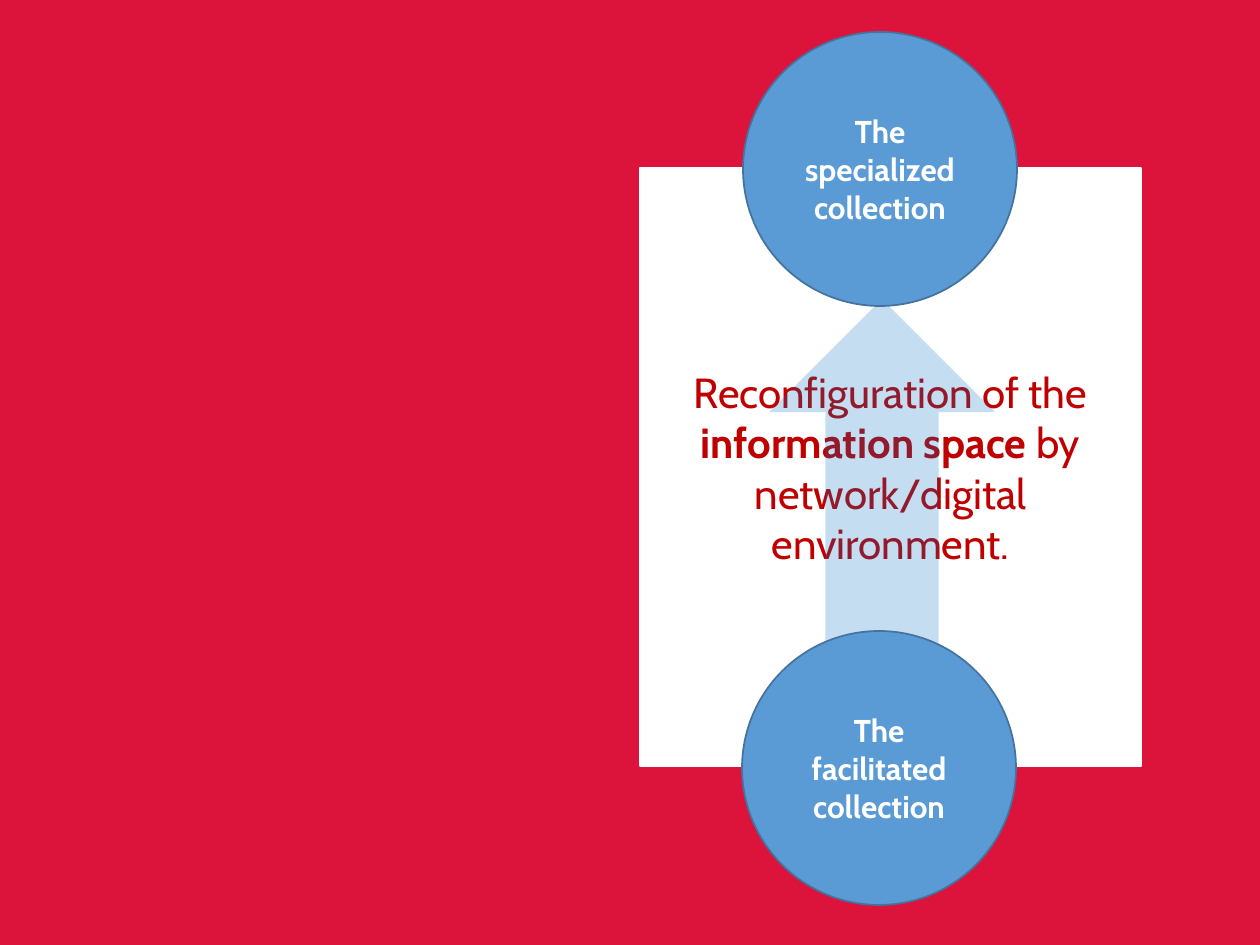
"""Build a slide showing two collections linked by an arrow across the information space."""
from dataclasses import dataclass

from lxml.etree import SubElement
from pptx import Presentation
from pptx.dml.color import RGBColor
from pptx.enum.shapes import MSO_SHAPE
from pptx.enum.text import MSO_ANCHOR, PP_ALIGN
from pptx.oxml.ns import qn
from pptx.util import Emu, Pt

PX_PER_INCH = 126
FONT = "Cabin"
COLORS = {
    "background": "DC143C",
    "panel": "FFFFFF",
    "message": "C00000",
    "arrow": "0070C0",
    "circle": "5B9BD5",
    "outline": "43739E",
    "label": "FFFFFF",
}


@dataclass(frozen=True)
class Box:
    left: int
    top: int
    width: int
    height: int


@dataclass(frozen=True)
class Run:
    text: str
    bold: bool = False


@dataclass(frozen=True)
class Circle:
    left: int
    top: int
    label: str


DIAMETER = 274
PANEL = Box(640, 168, 501, 598)
ARROW = Box(769, 299, 226, 368)
MESSAGE = [
    Run("Reconfiguration of the "),
    Run("information space ", True),
    Run("by network/digital environment."),
]
CIRCLES = [
    Circle(743, 32, "The specialized collection"),
    Circle(742, 631, "The facilitated collection"),
]


def px(n: int) -> Emu:
    """Convert pixels to EMU."""
    return Emu(round(n * 914400 / PX_PER_INCH))


def rgb(name: str) -> RGBColor:
    """Look up a named colour."""
    return RGBColor.from_string(COLORS[name])


def add_shape(s, kind: MSO_SHAPE, box: Box, fill: str, line: str | None = None):
    """Add a flat shape with an optional outline."""
    sp = s.shapes.add_shape(
        kind, px(box.left), px(box.top), px(box.width), px(box.height)
    )
    sp.shadow.inherit = False
    sp.fill.solid()
    sp.fill.fore_color.rgb = rgb(fill)
    if line:
        sp.line.color.rgb = rgb(line)
        sp.line.width = Pt(1)
    else:
        sp.line.fill.background()
    return sp


def add_text(sp, runs: list[Run], size: int, color: str) -> None:
    """Write centred runs into a shape."""
    tf = sp.text_frame
    tf.word_wrap = True
    tf.vertical_anchor = MSO_ANCHOR.MIDDLE
    p = tf.paragraphs[0]
    p.alignment = PP_ALIGN.CENTER
    for run in runs:
        r = p.add_run()
        r.text = run.text
        r.font.name = FONT
        r.font.size = Pt(size)
        r.font.bold = run.bold
        r.font.color.rgb = rgb(color)


def add_arrow(s, box: Box, opacity: int) -> None:
    """Add a translucent arrow pointing up."""
    sp = add_shape(s, MSO_SHAPE.DOWN_ARROW, box, "arrow")
    sp.rotation = 180
    clr = sp.element.spPr.find(f"{qn('a:solidFill')}/{qn('a:srgbClr')}")
    SubElement(clr, qn("a:alpha")).set("val", str(opacity * 1000))


def add_circle(s, circle: Circle) -> None:
    """Add a labelled circle."""
    box = Box(circle.left, circle.top, DIAMETER, DIAMETER)
    sp = add_shape(s, MSO_SHAPE.OVAL, box, "circle", "outline")
    add_text(sp, [Run(circle.label, True)], 18, "label")


def main() -> None:
    """Assemble and save the slide."""
    prs = Presentation()
    prs.slide_width, prs.slide_height = px(1260), px(945)
    s = prs.slides.add_slide(prs.slide_layouts[6])
    s.background.fill.solid()
    s.background.fill.fore_color.rgb = rgb("background")
    panel = add_shape(s, MSO_SHAPE.RECTANGLE, PANEL, "panel", "panel")
    add_text(panel, MESSAGE, 24, "message")
    add_arrow(s, ARROW, 23)
    for circle in CIRCLES:
        add_circle(s, circle)
    prs.save("out.pptx")


if __name__ == "__main__":
    main()
